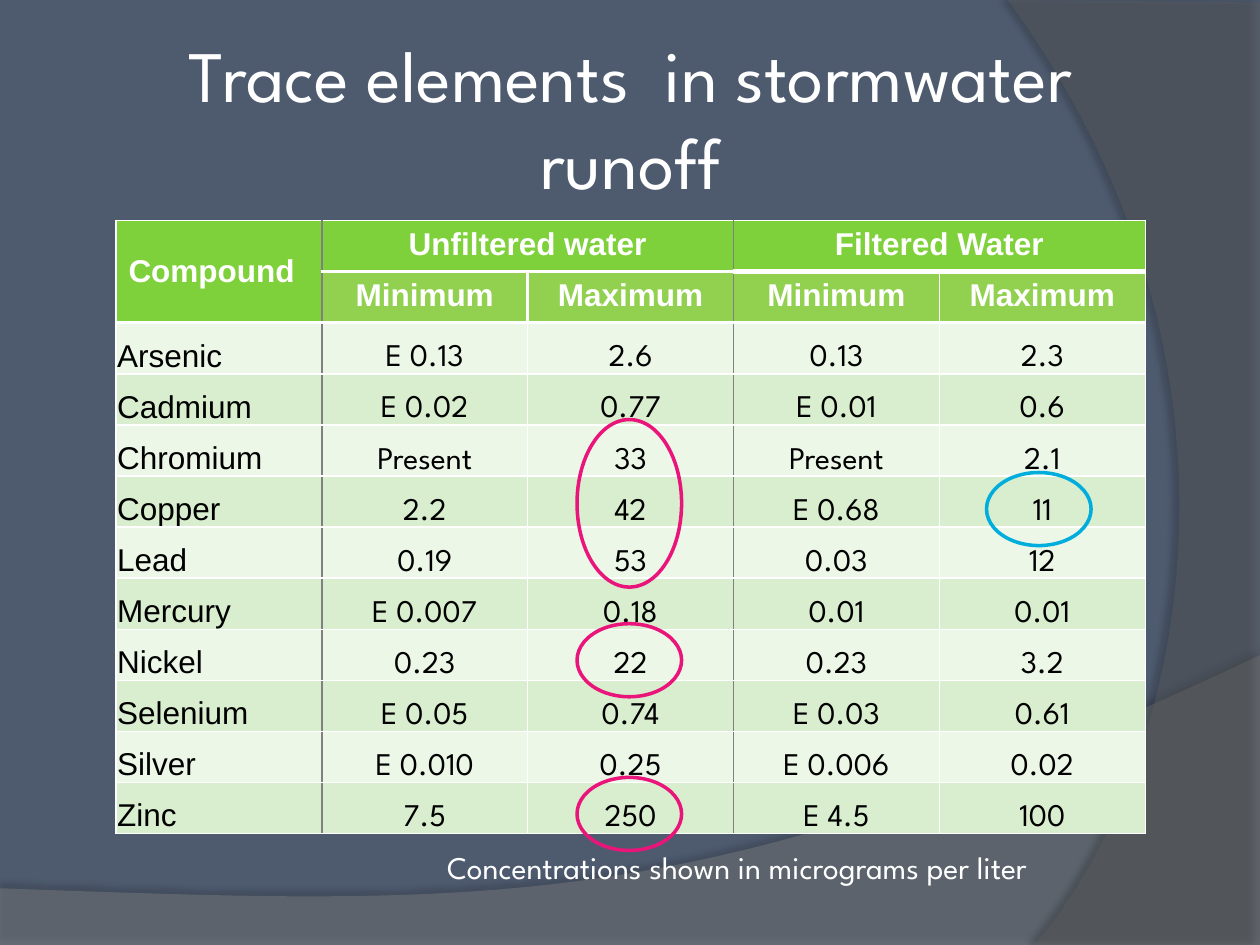
from dataclasses import dataclass

from lxml import etree
from pptx import Presentation
from pptx.dml.color import RGBColor
from pptx.enum.shapes import MSO_SHAPE
from pptx.enum.text import MSO_ANCHOR, PP_ALIGN
from pptx.oxml.ns import qn
from pptx.util import Inches, Pt

OVAL = MSO_SHAPE.OVAL
MIDDLE, BOTTOM, TOP = MSO_ANCHOR.MIDDLE, MSO_ANCHOR.BOTTOM, MSO_ANCHOR.TOP
CENTER, LEFT = PP_ALIGN.CENTER, PP_ALIGN.LEFT


@dataclass(frozen=True)
class Theme:
    """Colours, fonts and type sizes of the slide."""
    back: str = "4E5B6F"
    wave: str = "7F7F7F"
    arc: str = "5E5E5E"
    white: str = "FFFFFF"
    black: str = "000000"
    rule: str = "808080"
    head: str = "7FD13B"
    sub: str = "92D050"
    bands: tuple = ("ECF7E8", "D8EECE")
    pink: str = "EA157A"
    blue: str = "00ADDC"
    sans: str = "Arial"
    round: str = "League Spartan"
    title: float = 41.4
    body: float = 18


THEME = Theme()
HEADS = [
    ("Compound", "Unfiltered water", "", "Filtered Water", ""),
    ("", "Minimum", "Maximum", "Minimum", "Maximum"),
]
DATA = [
    ("Arsenic", "E 0.13", "2.6", "0.13", "2.3"),
    ("Cadmium", "E 0.02", "0.77", "E 0.01", "0.6"),
    ("Chromium", "Present", "33", "Present", "2.1"),
    ("Copper", "2.2", "42", "E 0.68", "11"),
    ("Lead", "0.19", "53", "0.03", "12"),
    ("Mercury", "E 0.007", "0.18", "0.01", "0.01"),
    ("Nickel", "0.23", "22", "0.23", "3.2"),
    ("Selenium", "E 0.05", "0.74", "E 0.03", "0.61"),
    ("Silver", "E 0.010", "0.25", "E 0.006", "0.02"),
    ("Zinc", "7.5", "250", "E 4.5", "100"),
]


def color(code):
    """Turn a hex code into a colour."""
    return RGBColor.from_string(code)


def style(para, size, face, code, align=LEFT, bold=False):
    """Set the font and alignment of a paragraph."""
    para.alignment = align
    para.font.size = Pt(size)
    para.font.name = face
    para.font.bold = bold
    para.font.color.rgb = color(code)


def curve(start, one, two, end, steps=40):
    """Return points along a cubic Bezier curve."""
    points = []
    for step in range(steps + 1):
        t = step / steps
        u = 1 - t
        parts = (u ** 3, 3 * u * u * t, 3 * u * t * t, t ** 3)
        points.append(tuple(
            sum(k * p[axis] for k, p in zip(parts, (start, one, two, end)))
            for axis in (0, 1)))
    return points


def sweep(slide, box, points, code, alpha, shade, angle):
    """Draw a translucent shape with a soft shadow inside a box."""
    left, top = box
    spots = [(Inches(left + x), Inches(top + y)) for x, y in points]
    build = slide.shapes.build_freeform(*spots[0])
    build.add_line_segments(spots[1:])
    shape = build.convert_to_shape()
    shape.line.fill.background()
    shape.fill.solid()
    shape.fill.fore_color.rgb = color(code)
    fill = shape.fill._xPr.find(qn("a:solidFill"))[0]
    etree.SubElement(fill, qn("a:alpha"), val=str(alpha * 1000))
    shape.shadow.inherit = False
    glow = etree.SubElement(
        shape._element.spPr.find(qn("a:effectLst")), qn("a:outerShdw"),
        blurRad=str(Pt(4)), dist=str(Pt(4)), dir=str(angle * 60000),
        algn="ctr", rotWithShape="0")
    tint = etree.SubElement(glow, qn("a:srgbClr"), val=THEME.black)
    etree.SubElement(tint, qn("a:alpha"), val=str(shade * 1000))


def backdrop(slide):
    """Colour the background and draw its two sweeps."""
    slide.background.fill.solid()
    slide.background.fill.fore_color.rgb = color(THEME.back)
    wave = curve((10, 0), (5.59, 2.09), (3.91, 1.99), (0, 1.85))
    sweep(slide, (0, 5.2), wave + [(0, 2.31), (10, 2.31)],
          THEME.wave, 45, 35, 270)
    arc = curve((0.21, 7.5), (1.35, 6.19), (2.18, 3), (0, 0))
    sweep(slide, (8, 0), arc + [(2, 0.02), (2, 7.5)],
          THEME.arc, 40, 45, 180)


def label(slide, box, text, size, align=LEFT, anchor=TOP, inset=0.1):
    """Place one white line of text in a box."""
    frame = slide.shapes.add_textbox(*map(Inches, box)).text_frame
    frame.word_wrap = True
    frame.vertical_anchor = anchor
    frame.margin_left = frame.margin_right = Inches(inset)
    frame.margin_top = frame.margin_bottom = Inches(0.05)
    frame.text = text
    style(frame.paragraphs[0], size, THEME.round, THEME.white, align)


def edge(cell, side, code, width):
    """Draw one border of a cell."""
    line = etree.SubElement(cell._tc.get_or_add_tcPr(), qn(f"a:ln{side}"),
                            w=str(Pt(width)))
    fill = etree.SubElement(line, qn("a:solidFill"))
    etree.SubElement(fill, qn("a:srgbClr"), val=code)


def borders(cell, row, col):
    """Draw grey rules between column groups and white ones elsewhere."""
    last = col + (cell.span_width if cell.is_merge_origin else 1) - 1
    thick = 2.25 if row == 1 else 1
    edge(cell, "L", THEME.rule if col in (1, 3) else THEME.white,
         thick if col == 2 else 1)
    edge(cell, "R", THEME.rule if last in (0, 2) else THEME.white,
         thick if last == 1 else 1)
    under = 3 if col >= 3 else 2.25
    edge(cell, "T", THEME.white, {1: under, 2: 2.25}.get(row, 1))
    edge(cell, "B", THEME.white, {0: under, 1: 2.25}.get(row, 1))


def paint(cell, row, col, text):
    """Fill a cell and set its text by its place in the grid."""
    head = row < len(HEADS)
    borders(cell, row, col)
    cell.fill.solid()
    if head:
        code = THEME.sub if row and col else THEME.head
    else:
        code = THEME.bands[row % 2]
        cell.margin_left = cell.margin_right = Inches(0.01)
        cell.margin_top, cell.margin_bottom = Inches(0.01), 0
    cell.fill.fore_color.rgb = color(code)
    cell.vertical_anchor = BOTTOM if not head else TOP if col else MIDDLE
    cell.text = text
    style(cell.text_frame.paragraphs[0], THEME.body,
          THEME.sans if head or not col else THEME.round,
          THEME.white if head else THEME.black,
          CENTER if col else LEFT, head)


def grid(slide, box):
    """Build the table of concentrations in a box."""
    rows = HEADS + DATA
    count, width = len(rows), len(rows[0])
    table = slide.shapes.add_table(count, width, *map(Inches, box)).table
    table.first_row = table.horz_banding = False
    for col in table.columns:
        col.width = Inches(box[2] / width)
    for row in table.rows:
        row.height = Inches(box[3] / count)
    for start, end in (((0, 0), (1, 0)), ((0, 1), (0, 2)), ((0, 3), (0, 4))):
        table.cell(*start).merge(table.cell(*end))
    for r, row in enumerate(rows):
        for c, text in enumerate(row):
            cell = table.cell(r, c)
            if not cell.is_spanned:
                paint(cell, r, c, text)


def ring(slide, box, code):
    """Circle values with an open oval."""
    shape = slide.shapes.add_shape(OVAL, *map(Inches, box))
    shape.shadow.inherit = False
    shape.fill.background()
    shape.line.color.rgb = color(code)
    shape.line.width = Pt(2)


def main():
    """Build and save the slide."""
    deck = Presentation()
    deck.slide_width, deck.slide_height = Inches(10), Inches(7.5)
    slide = deck.slides.add_slide(deck.slide_layouts[6])
    backdrop(slide)
    label(slide, (0.92, 0.3, 8.17, 1.25),
          "Trace elements  in stormwater runoff",
          THEME.title, CENTER, MIDDLE, 0.05)
    grid(slide, (0.92, 1.75, 8.17, 4.87))
    label(slide, (3.45, 6.68, 5.72, 0.4),
          "Concentrations shown in micrograms per liter", THEME.body)
    for left, top, high, code in (
            (4.58, 3.33, 1.33, THEME.pink), (4.58, 6.17, 0.58, THEME.pink),
            (7.83, 3.75, 0.58, THEME.blue), (4.58, 4.95, 0.58, THEME.pink)):
        ring(slide, (left, top, 0.83, high), code)
    deck.save("out.pptx")


if __name__ == "__main__":
    main()
